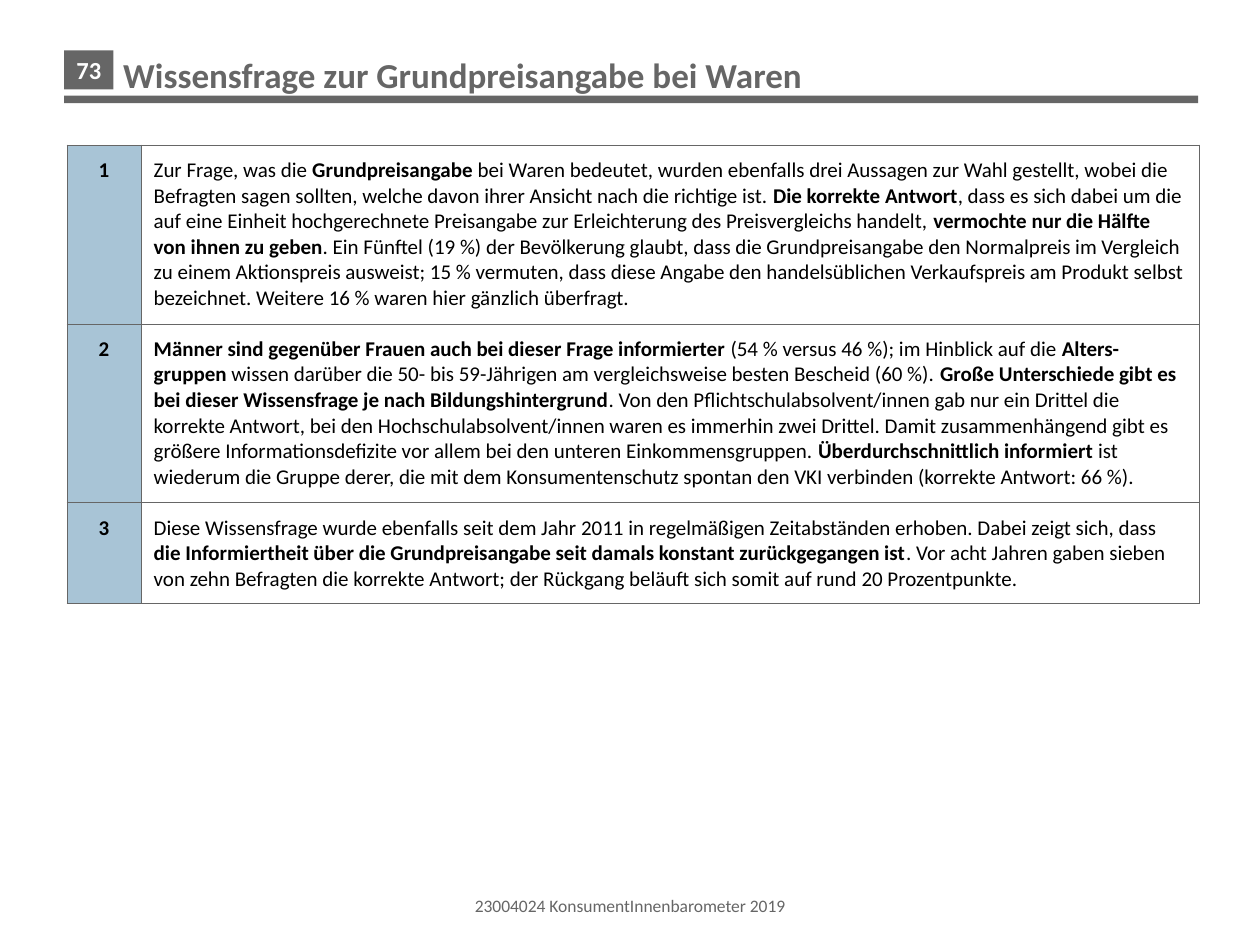
from lxml import etree
from pptx import Presentation
from pptx import util as u
from pptx.dml.color import RGBColor
from pptx.enum import shapes, text
from pptx.oxml import ns

GREY, BLUE, BLACK, WHITE = "666666", "A8C4D6", "000000", "FFFFFF"
CENTER = text.PP_ALIGN.CENTER
LEFT = text.PP_ALIGN.LEFT

FINDINGS = [
    [
        ("Zur Frage, was die ", False),
        ("Grundpreisangabe", True),
        (" bei Waren bedeutet, wurden ebenfalls drei Aussagen zur Wahl gestellt, "
         "wobei die Befragten sagen sollten, welche davon ihrer Ansicht nach die "
         "richtige ist. ", False),
        ("Die korrekte Antwort", True),
        (", dass es sich dabei um die auf eine Einheit hochgerechnete Preisangabe "
         "zur Erleichterung des Preisvergleichs handelt, ", False),
        ("vermochte nur die Hälfte von ihnen zu geben", True),
        (". Ein Fünftel (19 %) der Bevölkerung glaubt, dass die Grundpreisangabe "
         "den Normalpreis im Vergleich zu einem Aktionspreis ausweist; 15 % vermuten, "
         "dass diese Angabe den handelsüblichen Verkaufspreis am Produkt selbst "
         "bezeichnet. Weitere 16 % waren hier gänzlich überfragt.", False),
    ],
    [
        ("Männer sind gegenüber Frauen auch bei dieser Frage informierter ", True),
        ("(54 % versus 46 %); im Hinblick auf die ", False),
        ("Alters-gruppen", True),
        (" wissen darüber die 50- bis 59-Jährigen am vergleichsweise besten "
         "Bescheid (60 %). ", False),
        ("Große Unterschiede gibt es bei dieser Wissensfrage je nach "
         "Bildungshintergrund", True),
        (". Von den Pflichtschulabsolvent/innen gab nur ein Drittel die korrekte "
         "Antwort, bei den Hochschulabsolvent/innen waren es immerhin zwei Drittel. "
         "Damit zusammenhängend gibt es größere Informationsdefizite vor allem bei "
         "den unteren Einkommensgruppen. ", False),
        ("Überdurchschnittlich informiert ", True),
        ("ist wiederum die Gruppe derer, die mit dem Konsumentenschutz spontan den "
         "VKI verbinden (korrekte Antwort: 66 %).", False),
    ],
    [
        ("Diese Wissensfrage wurde ebenfalls seit dem Jahr 2011 in regelmäßigen "
         "Zeitabständen erhoben. Dabei zeigt sich, dass ", False),
        ("die Informiertheit über die Grundpreisangabe seit damals konstant "
         "zurückgegangen ist", True),
        (". Vor acht Jahren gaben sieben von zehn Befragten die korrekte Antwort; "
         "der Rückgang beläuft sich somit auf rund 20 Prozentpunkte.", False),
    ],
]


def rgb(color):
    """Turn a hex string into a colour."""
    return RGBColor.from_string(color)


def write(frame, runs, size, color, align):
    """Fill the first paragraph of a frame with (wording, bold) runs."""
    paragraph = frame.paragraphs[0]
    paragraph.alignment = align
    for wording, bold in runs:
        run = paragraph.add_run()
        run.text = wording
        run.font.color.rgb = rgb(color)
        style = {"name": "Calibri", "size": u.Pt(size), "bold": bold}
        for key, value in style.items():
            setattr(run.font, key, value)


def add_bar(slide, box):
    """Place a plain grey rectangle and return it."""
    bar = slide.shapes.add_shape(shapes.MSO_SHAPE.RECTANGLE, *map(u.Inches, box))
    bar.shadow.inherit = False
    bar.fill.solid()
    bar.fill.fore_color.rgb = rgb(GREY)
    bar.line.fill.background()
    return bar


def add_line(slide, box, wording, size, bold, align):
    """Place a single line of grey text, centred vertically in its box."""
    frame = slide.shapes.add_textbox(*map(u.Inches, box)).text_frame
    frame.word_wrap = True
    frame.vertical_anchor = text.MSO_ANCHOR.MIDDLE
    write(frame, [(wording, bold)], size, GREY, align)


def add_header(slide, left, top, width, number, title):
    """Place the page number, the title and the rule below them."""
    badge = add_bar(slide, (left, top, 0.39, 0.31)).text_frame
    badge.word_wrap = False
    badge.vertical_anchor = text.MSO_ANCHOR.MIDDLE
    write(badge, [(number, True)], 14, WHITE, CENTER)
    add_bar(slide, (left, top + 0.36, width, 0.06))
    add_line(slide, (left + 0.37, top - 0.04, width - 0.33, 0.47), title, 20, True, LEFT)


def add_borders(cell):
    """Draw a thin grey line on all four sides of a cell."""
    properties = cell._tc.get_or_add_tcPr()
    for index, side in enumerate(("lnL", "lnR", "lnT", "lnB")):
        line = etree.Element(ns.qn(f"a:{side}"), w=str(u.Pt(0.25)))
        fill = etree.SubElement(line, ns.qn("a:solidFill"))
        etree.SubElement(fill, ns.qn("a:srgbClr"), val=GREY)
        properties.insert(index, line)


def fill_cell(cell, runs, color, align):
    """Write and style one table cell."""
    for side in ("left", "right", "top", "bottom"):
        setattr(cell, f"margin_{side}", u.Inches(0.1))
    cell.fill.solid()
    cell.fill.fore_color.rgb = rgb(color)
    write(cell.text_frame, runs, 12, BLACK, align)
    add_borders(cell)


def add_findings(slide, box, findings, columns, heights):
    """Place the numbered table of findings."""
    table = slide.shapes.add_table(len(findings), 2, *map(u.Inches, box)).table
    for column, width in zip(table.columns, columns):
        column.width = u.Inches(width)
    for index, (runs, height) in enumerate(zip(findings, heights)):
        table.rows[index].height = u.Inches(height)
        fill_cell(table.cell(index, 0), [(str(index + 1), True)], BLUE, CENTER)
        fill_cell(table.cell(index, 1), runs, WHITE, LEFT)


def main():
    """Build and save the slide."""
    deck = Presentation()
    deck.slide_width, deck.slide_height = u.Inches(10), u.Inches(7.5)
    slide = deck.slides.add_slide(deck.slide_layouts[6])
    add_header(slide, 0.51, 0.4, 9, "73", "Wissensfrage zur Grundpreisangabe bei Waren")
    add_findings(slide, (0.53, 1.15, 8.99, 3.64), FINDINGS, (0.59, 8.4), (1.42, 1.42, 0.8))
    add_line(slide, (0.52, 7.01, 8.96, 0.36), "23004024 KonsumentInnenbarometer 2019",
             10, False, CENTER)
    deck.save("out.pptx")


if __name__ == "__main__":
    main()
